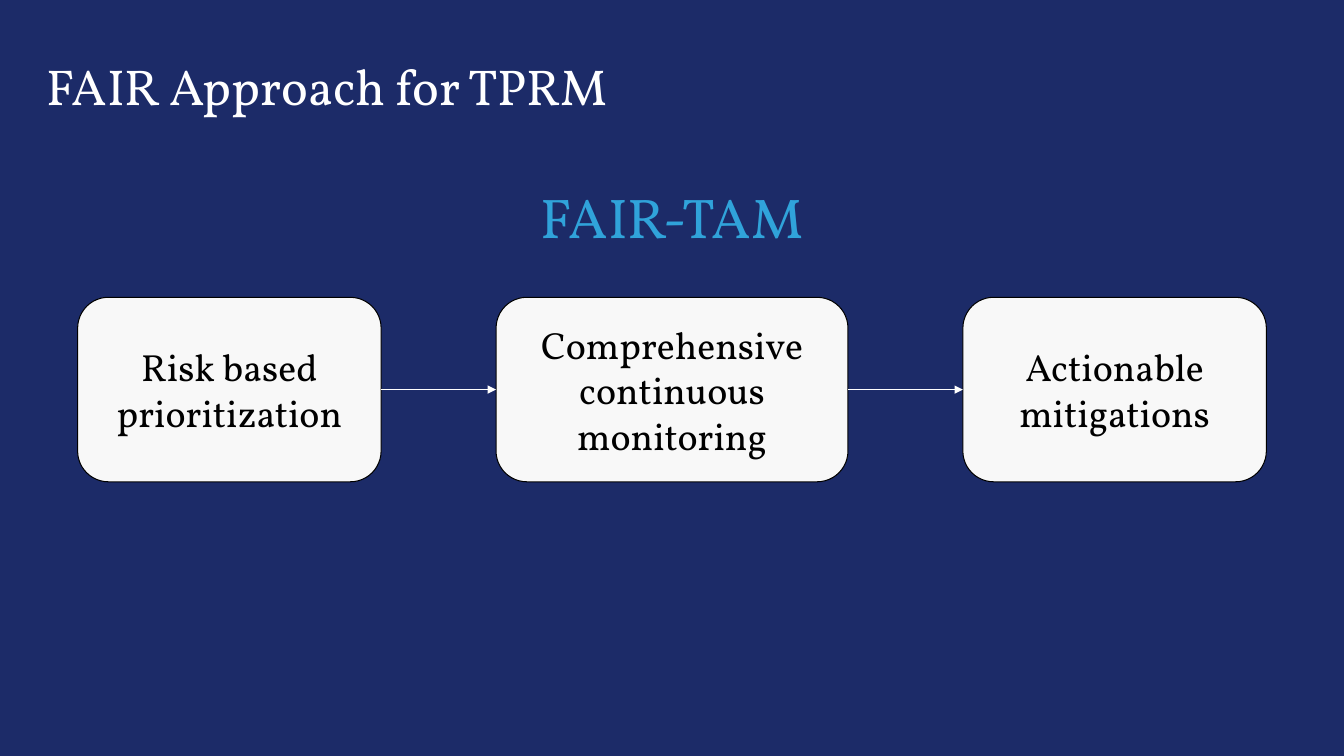
import itertools

import pptx
import pptx.dml.color
import pptx.enum.shapes
import pptx.enum.text
import pptx.oxml.ns
import pptx.util
from lxml import etree
from pptx.util import Inches

COLORS = {
    "background": "1C2B68",
    "title": "FFFFFF",
    "heading": "30A3DA",
    "step": "F8F8F8",
    "ink": "000000",
    "arrow": "FFFFFF",
}
FONT = "Vollkorn"
STEPS = [
    ("Risk based prioritization", 3.01),
    ("Comprehensive continuous monitoring", 3.49),
    ("Actionable mitigations", 3.01),
]
STEPS_LEFT, STEPS_TOP, STEP_HEIGHT, STEP_GAP = 0.77, 2.95, 1.83, 1.14


def color(name):
    return pptx.dml.color.RGBColor.from_string(COLORS[name])


def set_text(shape, text, size, color_name, alignment, anchor, margins):
    """Write one paragraph; margins are (horizontal, vertical) in inches."""
    frame = shape.text_frame
    frame.word_wrap = True
    frame.auto_size = pptx.enum.text.MSO_AUTO_SIZE.NONE
    frame.vertical_anchor = anchor
    frame.margin_left = frame.margin_right = Inches(margins[0])
    frame.margin_top = frame.margin_bottom = Inches(margins[1])
    frame.text = text
    paragraph = frame.paragraphs[0]
    paragraph.alignment = alignment
    paragraph.font.name = FONT
    paragraph.font.size = pptx.util.Pt(size)
    paragraph.font.color.rgb = color(color_name)
    return paragraph


def add_title(slide, text):
    title = slide.shapes.title
    title.left, title.top = Inches(0.36), Inches(0.16)
    title.width, title.height = Inches(11.5), Inches(1.45)
    paragraph = set_text(title, text, 36, "title", pptx.enum.text.PP_ALIGN.LEFT,
                         pptx.enum.text.MSO_ANCHOR.MIDDLE, (0.1, 0.05))
    paragraph.line_spacing = 0.9


def add_heading(slide, text):
    heading = slide.shapes.add_textbox(Inches(4.72), Inches(1.68), Inches(3.89), Inches(0.94))
    set_text(heading, text, 40, "heading", pptx.enum.text.PP_ALIGN.CENTER,
             pptx.enum.text.MSO_ANCHOR.TOP, (0.13, 0.13))
    heading.text_frame.auto_size = pptx.enum.text.MSO_AUTO_SIZE.SHAPE_TO_FIT_TEXT


def add_step(slide, text, left, width):
    step = slide.shapes.add_shape(
        pptx.enum.shapes.MSO_SHAPE.ROUNDED_RECTANGLE,
        Inches(left), Inches(STEPS_TOP), Inches(width), Inches(STEP_HEIGHT))
    step.shadow.inherit = False
    step.fill.solid()
    step.fill.fore_color.rgb = color("step")
    step.line.color.rgb = color("ink")
    step.line.width = pptx.util.Pt(0.75)
    set_text(step, text, 27, "ink", pptx.enum.text.PP_ALIGN.CENTER,
             pptx.enum.text.MSO_ANCHOR.MIDDLE, (0.13, 0.13))
    return step


def add_arrow(slide, source, target):
    """Link the right side of one step to the left side of the next."""
    arrow = slide.shapes.add_connector(pptx.enum.shapes.MSO_CONNECTOR.STRAIGHT, 0, 0, 0, 0)
    arrow.begin_connect(source, 3)
    arrow.end_connect(target, 1)
    arrow.line.color.rgb = color("arrow")
    arrow.line.width = pptx.util.Pt(0.75)
    properties = arrow.line._get_or_add_ln()
    etree.SubElement(properties, pptx.oxml.ns.qn("a:tailEnd"), type="triangle")
    etree.SubElement(arrow._element.spPr, pptx.oxml.ns.qn("a:effectLst"))


def main():
    presentation = pptx.Presentation()
    presentation.slide_width, presentation.slide_height = Inches(13.33), Inches(7.5)
    slide = presentation.slides.add_slide(presentation.slide_layouts.get_by_name("Title Only"))
    slide.background.fill.solid()
    slide.background.fill.fore_color.rgb = color("background")

    add_title(slide, "FAIR Approach for TPRM")
    add_heading(slide, "FAIR-TAM")
    steps = []
    left = STEPS_LEFT
    for text, width in STEPS:
        steps.append(add_step(slide, text, left, width))
        left += width + STEP_GAP
    for source, target in itertools.pairwise(steps):
        add_arrow(slide, source, target)

    presentation.save("out.pptx")


if __name__ == "__main__":
    main()
